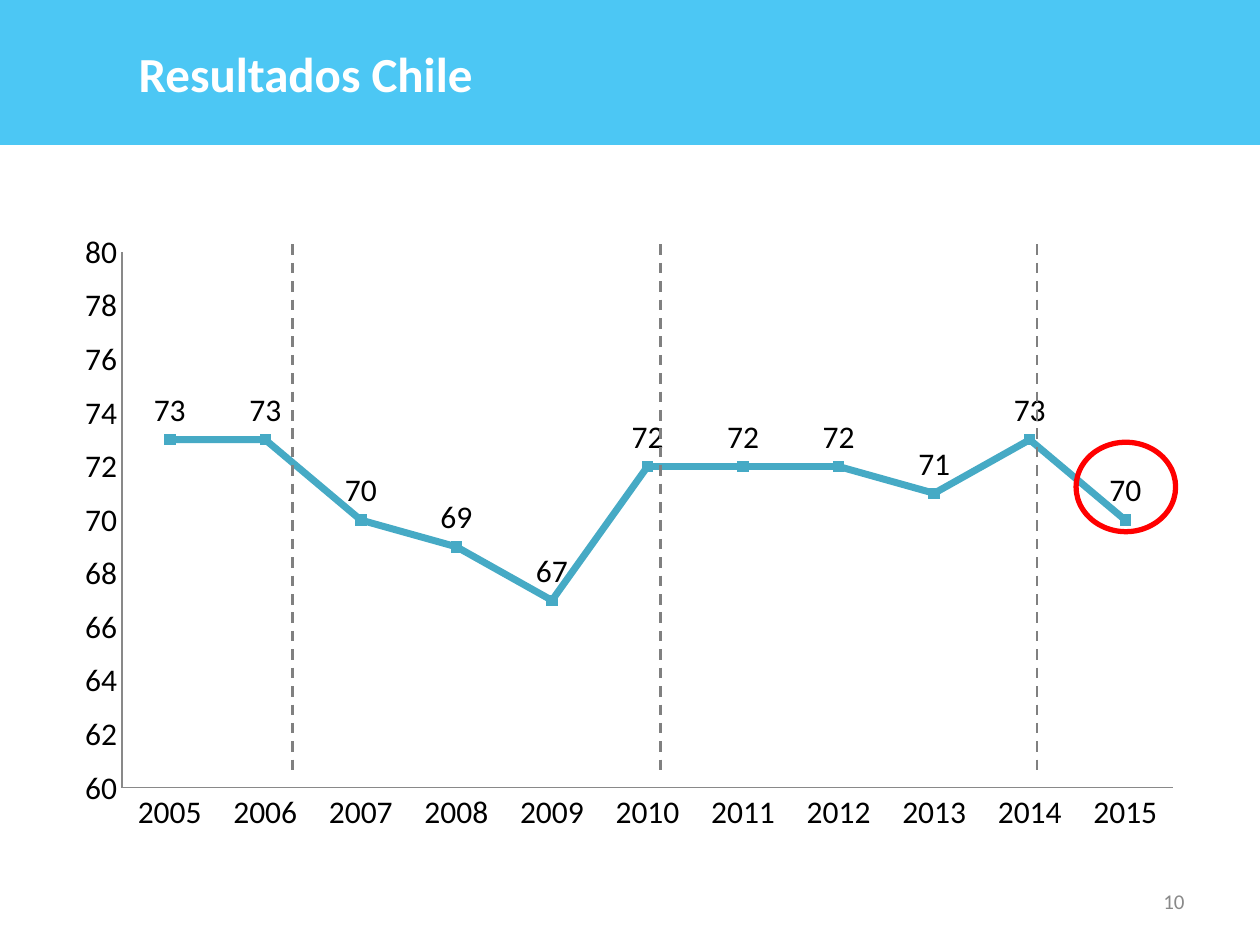
from lxml import etree
from pptx import Presentation
from pptx.chart.data import CategoryChartData
from pptx.dml.color import RGBColor
from pptx.enum.chart import XL_CHART_TYPE, XL_LABEL_POSITION, XL_MARKER_STYLE, XL_TICK_MARK
from pptx.enum.dml import MSO_LINE
from pptx.enum.shapes import MSO_CONNECTOR, MSO_SHAPE
from pptx.enum.text import MSO_ANCHOR, PP_ALIGN
from pptx.oxml import parse_xml
from pptx.oxml.ns import nsdecls, qn
from pptx.util import Inches, Pt

LINE_MARKERS = XL_CHART_TYPE.LINE_MARKERS
ABOVE = XL_LABEL_POSITION.ABOVE
SQUARE = XL_MARKER_STYLE.SQUARE
NO_TICK = XL_TICK_MARK.NONE
DASH = MSO_LINE.DASH
STRAIGHT = MSO_CONNECTOR.STRAIGHT
RECTANGLE, OVAL = MSO_SHAPE.RECTANGLE, MSO_SHAPE.OVAL
MIDDLE = MSO_ANCHOR.MIDDLE
LEFT, RIGHT = PP_ALIGN.LEFT, PP_ALIGN.RIGHT

BLACK = RGBColor(0x00, 0x00, 0x00)
WHITE = RGBColor(0xFF, 0xFF, 0xFF)
SKY = RGBColor(0x00, 0xB0, 0xF0)
TEAL = RGBColor(0x46, 0xAA, 0xC5)
RED = RGBColor(0xFF, 0x00, 0x00)
GRAY = RGBColor(0x80, 0x80, 0x80)
PAGE_GRAY = RGBColor(0x89, 0x89, 0x89)

YEARS = [str(year) for year in range(2005, 2016)]
SCORES = [73, 73, 70, 69, 67, 72, 72, 72, 71, 73, 70]
PERIOD_ENDS = [8.23, 5.24, 2.32]


def write(tf, text, size=18, color=BLACK, bold=False, align=LEFT):
    tf.word_wrap = True
    tf.vertical_anchor = MIDDLE
    p = tf.paragraphs[0]
    p.alignment = align
    r = p.add_run()
    r.text = text
    r.font.name = SlideBuilder.font
    r.font.size = Pt(size)
    r.font.bold = bold
    r.font.color.rgb = color


class SlideBuilder:
    font = "Calibri"

    def __init__(self, prs):
        self.slide = prs.slides.add_slide(prs.slide_layouts[6])
        self.shapes = self.slide.shapes

    def band(self, text, height, indent):
        sp = self.shapes.add_shape(RECTANGLE, 0, 0, Inches(10), Inches(height))
        sp.shadow.inherit = False
        sp.fill.solid()
        sp.fill.fore_color.rgb = SKY
        color = sp.fill._xPr.find(".//" + qn("a:srgbClr"))
        etree.SubElement(color, qn("a:alpha"), val="70000")
        sp.line.fill.background()
        sp.text_frame.margin_left = Inches(indent)
        write(sp.text_frame, text, size=28, color=WHITE, bold=True)

    def text(self, text, x, y, w, h, **style):
        sp = self.shapes.add_textbox(Inches(x), Inches(y), Inches(w), Inches(h))
        write(sp.text_frame, text, **style)

    def ring(self, x, y, w, h):
        sp = self.shapes.add_shape(OVAL, Inches(x), Inches(y), Inches(w), Inches(h))
        sp.shadow.inherit = False
        sp.fill.background()
        sp.line.color.rgb = RED
        sp.line.width = Pt(3)

    def divider(self, x, top, bottom):
        line = self.shapes.add_connector(
            STRAIGHT, Inches(x), Inches(top), Inches(x), Inches(bottom))
        line.line.color.rgb = GRAY
        line.line.width = Pt(1.5)
        line.line.dash_style = DASH
        etree.SubElement(line._element.spPr, qn("a:effectLst"))

    def line_chart(self, x, y, w, h):
        data = CategoryChartData()
        data.categories = YEARS
        data.add_series("Series 1", SCORES)
        chart = self.shapes.add_chart(
            LINE_MARKERS, Inches(x), Inches(y), Inches(w), Inches(h), data).chart
        chart.has_legend = False
        chart.has_title = False
        chart.font.name = self.font
        chart.font.size = Pt(18)
        chart.font.color.rgb = BLACK
        for axis in (chart.category_axis, chart.value_axis):
            axis.major_tick_mark = axis.minor_tick_mark = NO_TICK
            axis.has_major_gridlines = False
            axis.format.line.color.rgb = PAGE_GRAY
            axis.format.line.width = Pt(0.75)
        chart.value_axis.minimum_scale = 60
        chart.value_axis.maximum_scale = 80
        chart.value_axis.major_unit = 2

        plot = chart.plots[0]
        plot.vary_by_categories = False
        plot.has_data_labels = True
        plot.data_labels.show_value = True
        plot.data_labels.position = ABOVE
        series = plot.series[0]
        series.smooth = False
        series.format.line.color.rgb = TEAL
        series.format.line.width = Pt(4)
        series.marker.style = SQUARE
        series.marker.size = 6
        series.marker.format.fill.solid()
        series.marker.format.fill.fore_color.rgb = TEAL
        series.marker.format.line.color.rgb = TEAL
        self.place_plot(chart, x=0.052, y=0.051, w=0.927, h=0.859)

    @staticmethod
    def place_plot(chart, **box):
        """Fix the inner plot area, in fractions of the chart."""
        area = chart._chartSpace.find(".//" + qn("c:plotArea"))
        for old in area.findall(qn("c:layout")):
            area.remove(old)
        modes = "".join(f'<c:{k}Mode val="edge"/>' for k in "xy")
        sizes = "".join(f'<c:{k} val="{v}"/>' for k, v in box.items())
        area.insert(0, parse_xml(
            f'<c:layout {nsdecls("c")}><c:manualLayout><c:layoutTarget val="inner"/>'
            f'{modes}{sizes}</c:manualLayout></c:layout>'))


def main():
    prs = Presentation()
    prs.slide_width, prs.slide_height = Inches(10), Inches(7.5)
    s = SlideBuilder(prs)
    s.line_chart(0.5, 1.75, 9, 4.95)
    s.text("10", 7.17, 6.95, 2.33, 0.4, size=12, color=PAGE_GRAY, align=RIGHT)
    s.band("Resultados Chile", height=1.15, indent=1.1)
    s.ring(8.54, 3.51, 0.79, 0.71)
    for x in PERIOD_ENDS:
        s.divider(x, 1.94, 6.11)
    prs.save("out.pptx")


if __name__ == "__main__":
    main()
